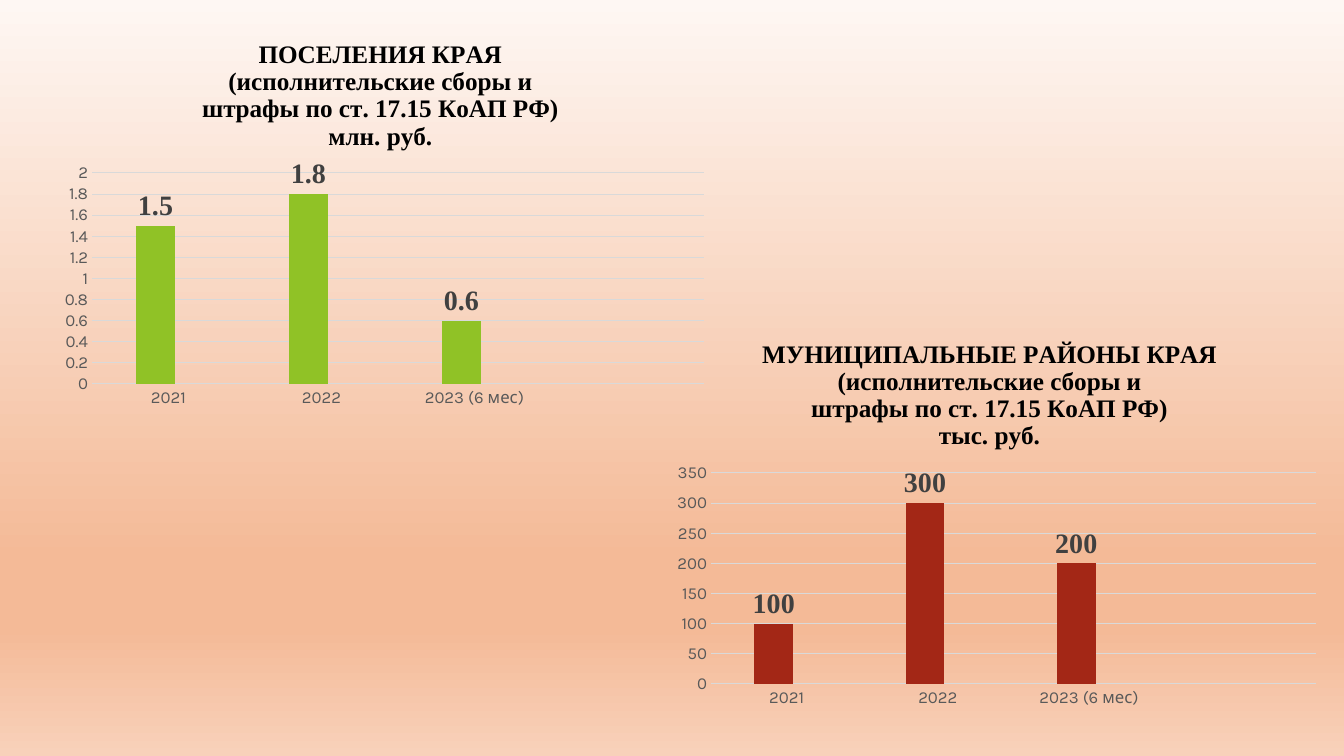
from lxml import etree
from pptx import Presentation
from pptx import util as u
from pptx.chart.data import CategoryChartData
from pptx.dml.color import RGBColor
from pptx.enum import chart as charts
from pptx.oxml import parse_xml
from pptx.oxml.ns import nsdecls, qn

BLACK = RGBColor(0x00, 0x00, 0x00)
LABEL_GREY = RGBColor(0x40, 0x40, 0x40)
AXIS_GREY = RGBColor(0x59, 0x59, 0x59)
GRID_GREY = RGBColor(0xD9, 0xD9, 0xD9)
GREEN = RGBColor(0x90, 0xC2, 0x26)
DARK_GREEN = RGBColor(0x54, 0xA0, 0x21)
YELLOW = RGBColor(0xE6, 0xB9, 0x1E)
RED = RGBColor(0xA3, 0x27, 0x16)
BRIGHT_RED = RGBColor(0xC4, 0x2F, 0x1A)
PINK = RGBColor(0xDB, 0xA4, 0xA2)
BACKGROUND_STOPS = [
    (0, RGBColor(0xFE, 0xF7, 0xF3)),
    (74, RGBColor(0xF4, 0xBA, 0x97)),
    (83, RGBColor(0xF4, 0xBA, 0x97)),
    (100, RGBColor(0xF8, 0xD1, 0xBA)),
]

CHART_SIZE = (665, 398)
PERIODS = ["2021", "2022", "2023 (6 мес)", ""]
TITLE = "{}\n(исполнительские сборы и\nштрафы по ст. 17.15 КоАП РФ)\n{}"


def px(length):
    return u.Emu(round(length * 914400 / 100.8))


class ChartSlide:
    body_font = {"name": "Karla", "size": u.Pt(10)}
    axis_font = {"name": "Karla", "size": u.Pt(12)}
    title_font = {"name": "Times New Roman", "size": u.Pt(18), "bold": True}
    label_font = {"name": "Times New Roman", "size": u.Pt(20), "bold": True}

    def __init__(self, presentation):
        self.slide = presentation.slides.add_slide(presentation.slide_layouts[6])

    def style(self, font, values, color):
        for name, value in values.items():
            setattr(font, name, value)
        font.color.rgb = color

    def line(self, line_format):
        line_format.color.rgb = GRID_GREY
        line_format.width = u.Pt(0.75)

    def background(self, stops):
        fill = self.slide.background.fill
        fill.gradient()
        fill.gradient_angle = 270
        stop_list = self.slide.element.find(".//" + qn("a:gsLst"))
        for stop in list(stop_list):
            stop_list.remove(stop)
        for position, color in stops:
            stop = etree.SubElement(stop_list, qn("a:gs"), pos=str(position * 1000))
            etree.SubElement(stop, qn("a:srgbClr"), val=str(color))

    def place(self, parent, index, box, target=""):
        """Fix a chart part at box: left, top and optionally width, height in px."""
        for layout in parent.findall(qn("c:layout")):
            parent.remove(layout)
        modes = '<c:xMode val="edge"/><c:yMode val="edge"/>'
        sizes = "".join(
            f'<c:{name} val="{length / whole:.4f}"/>'
            for name, length, whole in zip("xywh", box, CHART_SIZE * 2))
        parent.insert(index, parse_xml(
            f'<c:layout {nsdecls("c")}><c:manualLayout>{target}{modes}{sizes}'
            "</c:manualLayout></c:layout>"))

    def title(self, chart, words, left):
        frame = chart.chart_title.text_frame
        frame.text = words
        for paragraph in frame.paragraphs:
            self.style(paragraph.font, self.title_font, BLACK)
            for run in paragraph.runs:
                self.style(run.font, self.title_font, BLACK)
        self.place(chart.chart_title.element, 1, (left, 18))

    def axes(self, chart, maximum, step):
        for axis in (chart.category_axis, chart.value_axis):
            axis.major_tick_mark = axis.minor_tick_mark = charts.XL_TICK_MARK.NONE
            self.style(axis.tick_labels.font, self.axis_font, AXIS_GREY)
        self.line(chart.category_axis.format.line)
        values = chart.value_axis
        values.format.line.fill.background()
        values.minimum_scale, values.maximum_scale = 0, maximum
        values.major_unit = step
        values.has_major_gridlines = True
        self.line(values.major_gridlines.format.line)

    def labels(self, series):
        labels = series.data_labels
        labels.show_value = True
        labels.position = charts.XL_LABEL_POSITION.OUTSIDE_END
        self.style(labels.font, self.label_font, LABEL_GREY)

    def column_chart(self, corner, title, title_left, values, colors, scale, plot):
        data = CategoryChartData()
        data.categories = PERIODS
        for number in range(1, len(colors) + 1):
            data.add_series(f"Series {number}",
                            values if number == 1 else [None] * len(PERIODS))
        chart = self.slide.shapes.add_chart(
            charts.XL_CHART_TYPE.COLUMN_CLUSTERED,
            *map(px, corner + CHART_SIZE), data).chart
        chart.has_legend = False
        self.style(chart.font, self.body_font, BLACK)
        self.title(chart, title, title_left)
        self.axes(chart, *scale)
        columns = chart.plots[0]
        columns.gap_width, columns.overlap = 224, 67
        columns.vary_by_categories = False
        for series, color in zip(columns.series, colors):
            series.format.fill.solid()
            series.format.fill.fore_color.rgb = color
        self.labels(columns.series[0])
        plot_area = chart.element.find(".//" + qn("c:plotArea"))
        self.place(plot_area, 0, plot, '<c:layoutTarget val="inner"/>')


def main():
    presentation = Presentation()
    presentation.slide_width, presentation.slide_height = px(1344), px(756)
    page = ChartSlide(presentation)
    page.background(BACKGROUND_STOPS)
    page.column_chart(
        (52, 18), TITLE.format("ПОСЕЛЕНИЯ КРАЯ", "млн. руб."), 147,
        [1.5, 1.8, 0.6, None], [GREEN, DARK_GREEN, YELLOW],
        (2, 0.2), (40, 155, 612, 211))
    page.column_chart(
        (664, 318), TITLE.format("МУНИЦИПАЛЬНЫЕ РАЙОНЫ КРАЯ", "тыс. руб."), 95,
        [100, 300, 200, None], [RED, BRIGHT_RED, PINK],
        (350, 50), (47, 155, 605, 211))
    presentation.save("out.pptx")


if __name__ == "__main__":
    main()
